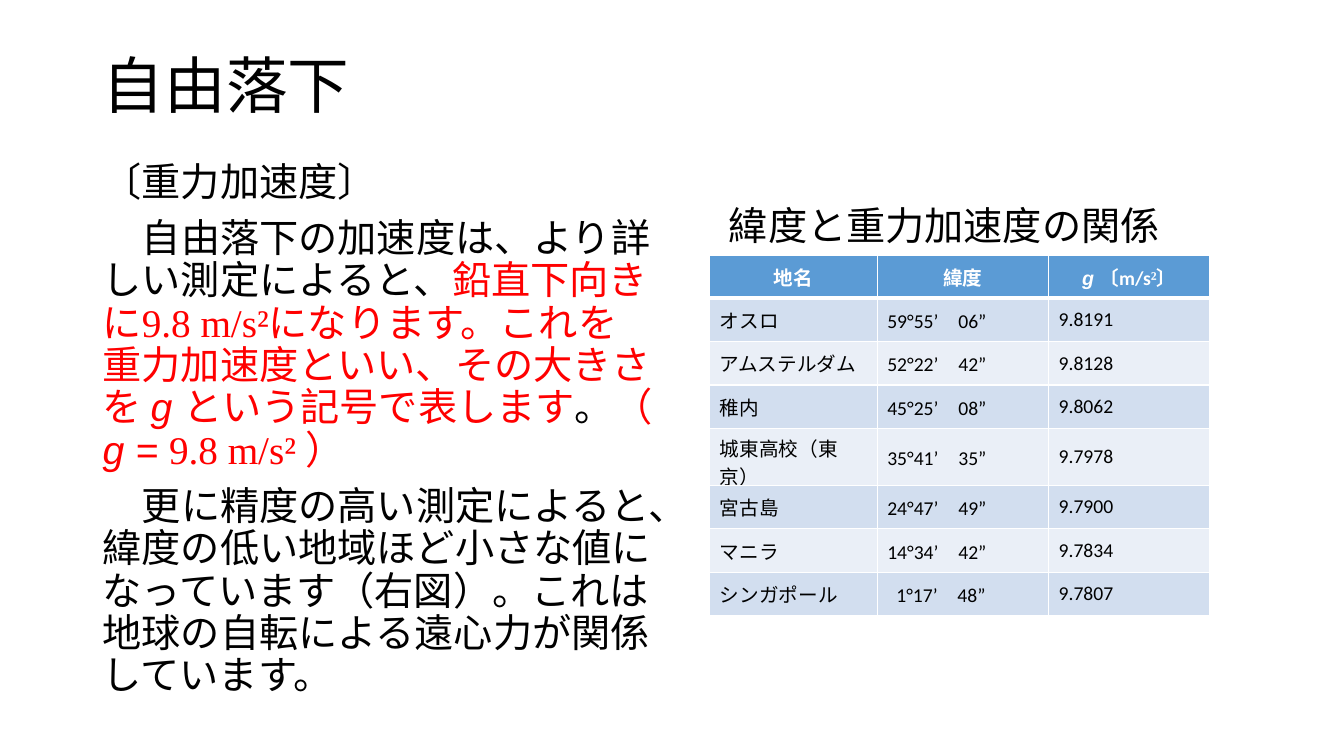
from dataclasses import dataclass

from lxml import etree
from pptx import Presentation
from pptx.dml.color import RGBColor
from pptx.enum import text
from pptx.oxml import ns
from pptx.util import Inches, Pt


@dataclass(frozen=True)
class Theme:
    black: str = "000000"
    red: str = "FF0000"
    white: str = "FFFFFF"
    header: str = "5B9BD5"
    bands: tuple = ("D2DEEF", "EAEFF7")
    title_size: int = 44
    body_size: int = 28
    table_size: int = 14
    sans: str = "Calibri"
    serif: str = "Times New Roman"
    symbol: str = "Arial"


THEME = Theme()
TITLE = dict(name=THEME.sans, size=THEME.title_size, color=THEME.black)
BODY = dict(name=THEME.serif, size=THEME.body_size, color=THEME.black)
RED = dict(BODY, color=THEME.red)
RED_SYMBOL = dict(RED, name=THEME.symbol, italic=True)
CELL = dict(name=THEME.sans, size=THEME.table_size, color=THEME.black, bold=False)
HEAD = dict(CELL, color=THEME.white, bold=True)

BODY_PARAS = [
    (0, [("〔重力加速度〕", BODY)]),
    (0.39, [
        ("自由落下の加速度は、より詳しい測定によると、", BODY),
        ("鉛直下向きに9.8 m/s²になります。これを重力加速度といい、その大きさを ", RED),
        ("g ", RED_SYMBOL),
        ("という記号で表します", RED),
        ("。", BODY),
        ("（ ", RED),
        ("g = ", RED_SYMBOL),
        ("9.8 m/s² ）", RED),
    ]),
    (0.39, [("更に精度の高い測定によると、緯度の低い地域ほど小さな値になっています"
             "（右図）。これは地球の自転による遠心力が関係しています。", BODY)]),
]
CAPTION = [(0, [("緯度と重力加速度の関係", BODY)])]
HEADINGS = [
    [("地名", HEAD)],
    [("緯度", HEAD)],
    [("g ", dict(HEAD, name=THEME.symbol, italic=True)), ("〔m/s", HEAD),
     ("²", dict(HEAD, name=THEME.serif)), ("〕", HEAD)],
]
PLACES = [
    ("オスロ", "59°55’　06”", "9.8191"),
    ("アムステルダム", "52°22’　42”", "9.8128"),
    ("稚内", "45°25’　08”", "9.8062"),
    ("城東高校（東京）", "35°41’　35”", "9.7978"),
    ("宮古島", "24°47’　49”", "9.7900"),
    ("マニラ", "14°34’　42”", "9.7834"),
    ("シンガポール", "1°17’　48”", "9.7807"),
]
COLUMN_WIDTHS = (1.66, 1.7, 1.6)
ROW_HEIGHT = 0.43


def add_spans(para, spans):
    for wording, style in spans:
        span = para.add_run()
        span.text = wording
        for key, value in style.items():
            if key == "color":
                span.font.color.rgb = RGBColor.from_string(value)
            else:
                setattr(span.font, key, Pt(value) if key == "size" else value)


def fill_frame(frame, paras):
    """Write (first-line indent, spans) paragraphs into a text frame."""
    frame.word_wrap = True
    for index, (indent, spans) in enumerate(paras):
        para = frame.add_paragraph() if index else frame.paragraphs[0]
        para.line_spacing = 0.9
        para.space_before = Pt(10 if index else 0)
        if indent:
            para._p.get_or_add_pPr().set("indent", str(Inches(indent)))
        add_spans(para, spans)


def add_title(page, wording):
    title = page.shapes.title
    title.left, title.top = Inches(0.92), Inches(0.4)
    title.width, title.height = Inches(11.5), Inches(0.96)
    frame = title.text_frame
    fill_frame(frame, [(0, [(wording, TITLE)])])
    frame.vertical_anchor = text.MSO_ANCHOR.MIDDLE
    frame.paragraphs[0].alignment = text.PP_ALIGN.LEFT


def add_text(page, left, top, width, height, paras, inset=0.1):
    box = page.shapes.add_textbox(*map(Inches, (left, top, width, height)))
    box.text_frame.margin_left = Inches(inset)
    fill_frame(box.text_frame, paras)


def set_borders(cell, bottom):
    properties = cell._tc.get_or_add_tcPr()
    for side, width in dict(lnL=1, lnR=1, lnT=1, lnB=bottom).items():
        line = etree.SubElement(properties, ns.qn(f"a:{side}"), w=str(Pt(width)))
        fill = etree.SubElement(line, ns.qn("a:solidFill"))
        etree.SubElement(fill, ns.qn("a:srgbClr"), val=THEME.white)


def format_cell(cell, spans, color, align, bottom=1):
    set_borders(cell, bottom)
    cell.fill.solid()
    cell.fill.fore_color.rgb = RGBColor.from_string(color)
    cell.vertical_anchor = text.MSO_ANCHOR.MIDDLE
    para = cell.text_frame.paragraphs[0]
    para.alignment = align
    add_spans(para, spans)


def add_gravity_table(page, left, top):
    count = len(PLACES) + 1
    table = page.shapes.add_table(
        count, len(COLUMN_WIDTHS), Inches(left), Inches(top),
        Inches(sum(COLUMN_WIDTHS)), Inches(ROW_HEIGHT * count)).table
    for column, width in zip(table.columns, COLUMN_WIDTHS):
        column.width = Inches(width)
    for row in table.rows:
        row.height = Inches(ROW_HEIGHT)
    for col, spans in enumerate(HEADINGS):
        format_cell(table.cell(0, col), spans, THEME.header,
                    text.PP_ALIGN.CENTER, bottom=3)
    for row, values in enumerate(PLACES, start=1):
        for col, value in enumerate(values):
            format_cell(table.cell(row, col), [(value, CELL)],
                        THEME.bands[(row - 1) % 2], text.PP_ALIGN.LEFT)
    # Line up the one-digit latitude with the two-digit ones
    table.cell(count - 1, 1).margin_left = Inches(0.19)


def main():
    deck = Presentation()
    deck.slide_width, deck.slide_height = Inches(13.33), Inches(7.5)
    page = deck.slides.add_slide(deck.slide_layouts.get_by_name("Title Only"))
    add_title(page, "自由落下")
    add_text(page, 0.92, 1.56, 5.67, 5.55, BODY_PARAS)
    add_text(page, 6.75, 2, 5.67, 4.76, CAPTION, inset=0.48)
    add_gravity_table(page, 7.04, 2.53)
    deck.save("out.pptx")


if __name__ == "__main__":
    main()
